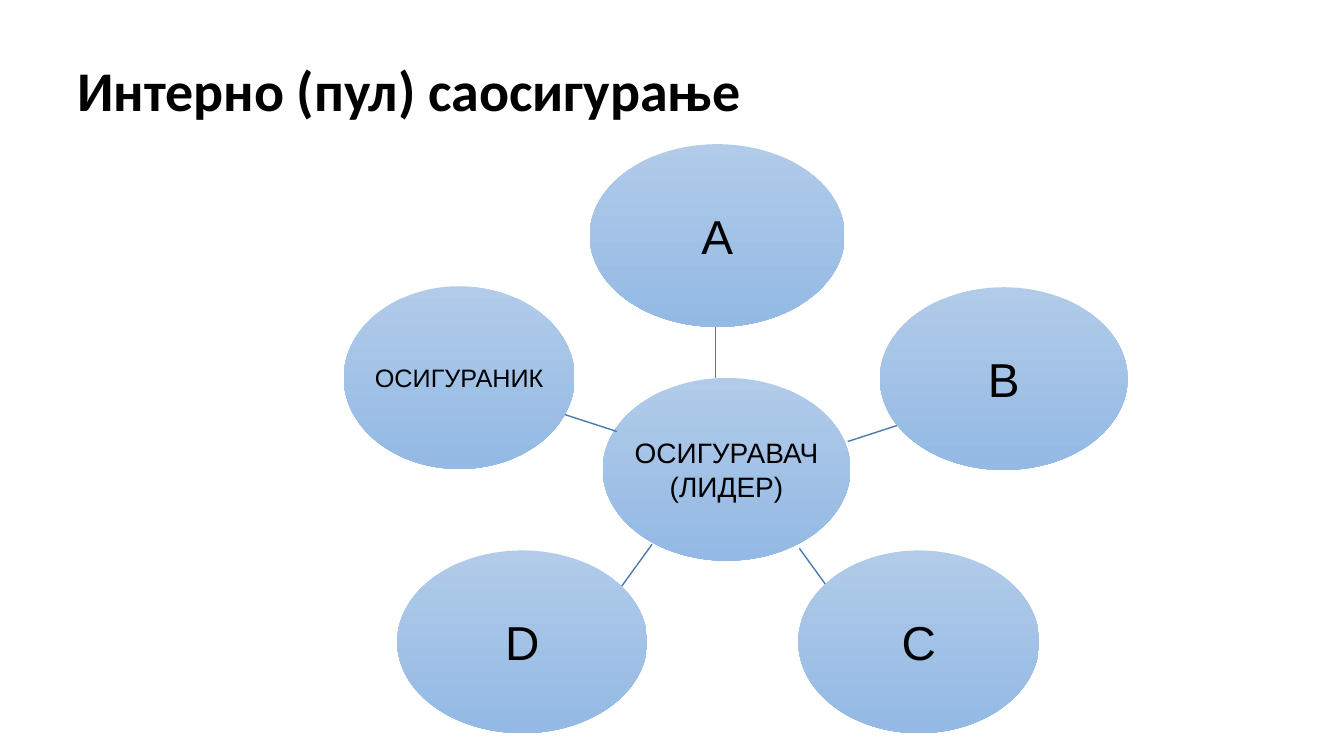
import math

import lxml.etree
import pptx
import pptx.dml.color
import pptx.enum.shapes
import pptx.enum.text
import pptx.oxml.ns
import pptx.util

Pt = pptx.util.Pt
ALIGN = pptx.enum.text.PP_ALIGN
COLORS = {"text": "000000", "top": "B1CBE9", "base": "93B9E4", "line": "497CAB"}
HUB = ("ОСИГУРАВАЧ\v(ЛИДЕР)", 430.5, 270, 177, 20)
NODES = [
    ("A", 421.2, 103, 182.2, 34),
    ("B", 628.5, 205.2, 177, 34),
    ("C", 570.2, 393.2, 172.2, 34),
    ("D", 283.7, 393.2, 178.6, 34),
    ("ОСИГУРАНИК", 245.5, 204.5, 165, 18),
]
STARTS = [(511.2, 270), (605.5, 315.4), (571, 391.7), (465.8, 388.8), (440.6, 308.2)]
HEIGHT = 130.5
SPOKE = 39


def tint(name):
    return pptx.dml.color.RGBColor.from_string(COLORS[name])


def write(shape, text, font="Arial", size=20, bold=False, align=ALIGN.CENTER, space=1.0, wrap=True):
    frame = shape.text_frame
    frame.text = text
    frame.word_wrap = wrap
    frame.auto_size = pptx.enum.text.MSO_AUTO_SIZE.NONE
    frame.vertical_anchor = pptx.enum.text.MSO_ANCHOR.MIDDLE
    para = frame.paragraphs[0]
    para.alignment = align
    para.line_spacing = space
    for run in para.runs:
        run.font.name = font
        run.font.size = Pt(size)
        run.font.bold = bold
        run.font.color.rgb = tint("text")


class Board:
    def __init__(self, slide):
        self.slide = slide
        self.shapes = slide.shapes

    def title(self, text, left, top, width, height):
        shape = self.shapes.title
        shape.left, shape.top = Pt(left), Pt(top)
        shape.width, shape.height = Pt(width), Pt(height)
        write(shape, text, font="Calibri", size=40, bold=True, align=ALIGN.LEFT, space=0.9)

    def oval(self, text, left, top, width, size):
        kind = pptx.enum.shapes.MSO_SHAPE.OVAL
        shape = self.shapes.add_shape(kind, Pt(left), Pt(top), Pt(width), Pt(HEIGHT))
        shape.shadow.inherit = False
        shape.line.fill.background()
        shape.fill.gradient()
        shape.fill.gradient_angle = 270
        for stop, name, place in zip(shape.fill.gradient_stops, ("top", "base"), (0, 1)):
            stop.color.rgb = tint(name)
            stop.position = place
        write(shape, text, size=size, wrap=False)

    def spoke(self, left, top, angle):
        turn = math.radians(angle)
        right = left + SPOKE * math.cos(turn)
        end = top + SPOKE * math.sin(turn)
        kind = pptx.enum.shapes.MSO_CONNECTOR.STRAIGHT
        line = self.shapes.add_connector(kind, Pt(left), Pt(top), Pt(right), Pt(end))
        line.line.color.rgb = tint("line")
        line.line.width = Pt(1)
        tag = pptx.oxml.ns.qn("a:effectLst")
        lxml.etree.SubElement(line._element.spPr, tag)


def main():
    deck = pptx.Presentation()
    deck.slide_width, deck.slide_height = Pt(960), Pt(540)
    board = Board(deck.slides.add_slide(deck.slide_layouts[5]))
    board.title("Интерно (пул) саосигурање", 48, 21.6, 864, 90)
    board.oval(*HUB)
    for step, (start, node) in enumerate(zip(STARTS, NODES)):
        board.spoke(*start, 72 * step - 90)
        board.oval(*node)
    deck.save("out.pptx")


if __name__ == "__main__":
    main()
